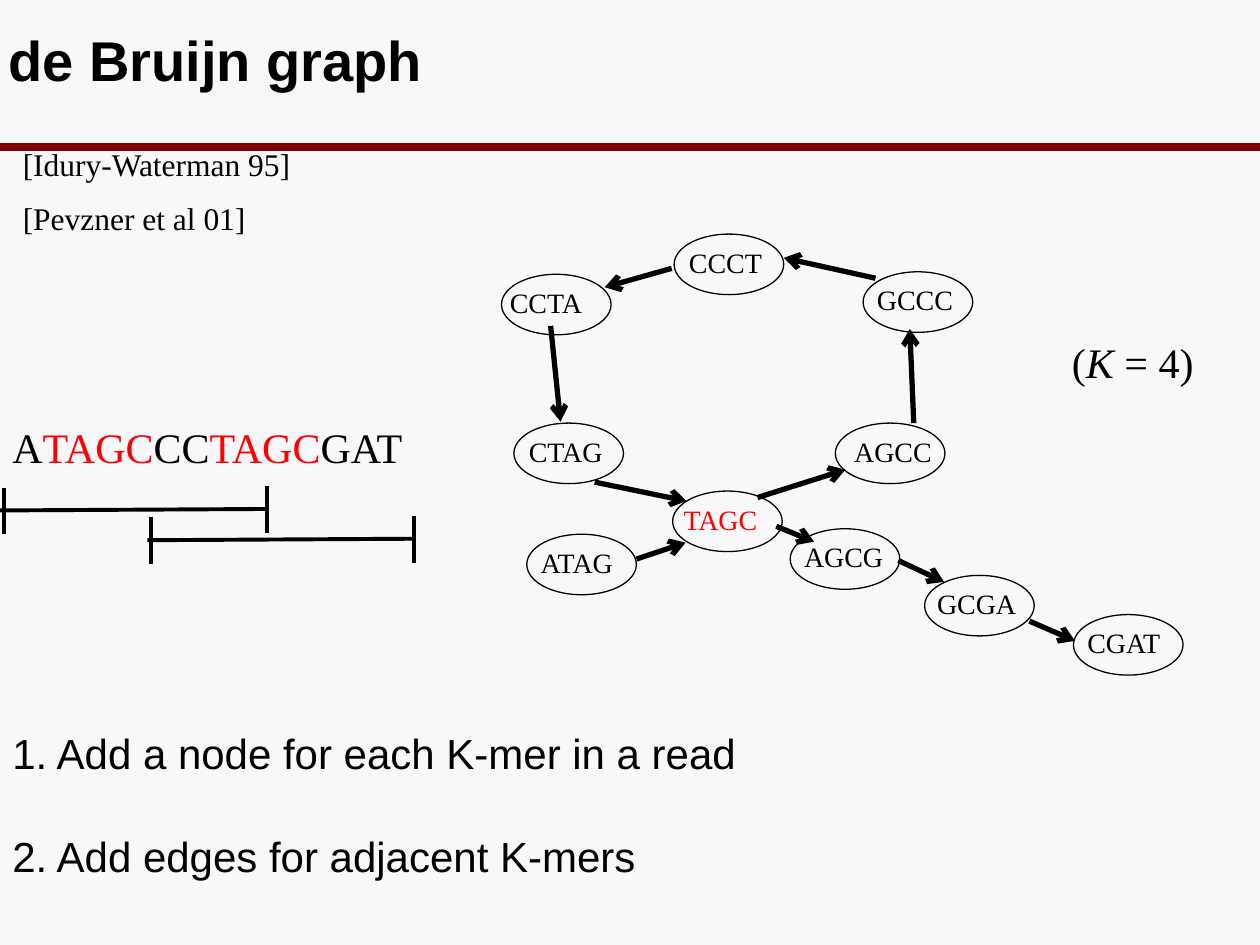
import pptx
import pptx.util
import pptx.dml.color
import pptx.enum.shapes
import pptx.enum.text
import pptx.oxml.ns
from lxml import etree

Cm, Pt = pptx.util.Cm, pptx.util.Pt
qn = pptx.oxml.ns.qn
COLORS = {"background": "F8F8FA", "rule": "800000", "ink": "000000", "repeat": "FF0000"}
SANS, SERIF = "Arial", "Times New Roman"
NODE_W, NODE_H = 2.21, 1.22

NODES = {
    "TAGC": (3.45, 5.18, -0.03),
    "AGCC": (6.73, 3.81, 0.13),
    "AGCG": (5.82, 5.94, 0.03),
    "GCCC": (7.29, 0.76, 0.03),
    "GCGA": (8.53, 6.88, 0),
    "CCCT": (3.48, 0, 0.05),
    "CCTA": (0, 0.81, -0.08),
    "CTAG": (0.25, 3.81, 0.05),
    "ATAG": (0.51, 6.05, 0.03),
    "CGAT": (11.53, 7.67, 0.03),
}
EDGES = [
    (0.99, 1.85, 1.19, 3.78),
    (3.43, 0.69, 2.08, 1.07),
    (7.54, 0.89, 5.69, 0.48),
    (8.31, 3.81, 8.23, 1.91),
    (5.54, 5.89, 6.3, 6.2),
    (8, 6.58, 8.92, 7.01),
    (5.16, 5.31, 6.93, 4.75),
    (2.72, 6.55, 3.71, 6.22),
    (10.64, 7.8, 11.56, 8.2),
    (1.88, 5, 3.73, 5.38),
]


def rgb(name):
    return pptx.dml.color.RGBColor.from_string(COLORS[name])


def add_text(shapes, box, runs, size, font, wrap=False, bold=False):
    tb = shapes.add_textbox(*(Cm(v) for v in box))
    tf = tb.text_frame
    tf.word_wrap = wrap
    p = tf.paragraphs[0]
    p.font.size, p.font.name, p.font.bold = Pt(size), font, bold
    for text, color, italic in runs:
        r = p.add_run()
        r.text = text
        r.font.color.rgb = rgb(color)
        if italic:
            r.font.italic = True
    return tf


def add_line(shapes, x1, y1, x2, y2, width, color="ink", arrow=False):
    line = shapes.add_connector(pptx.enum.shapes.MSO_CONNECTOR.STRAIGHT,
                                Cm(x1), Cm(y1), Cm(x2), Cm(y2))
    line.line.color.rgb = rgb(color)
    line.line.width = Pt(width)
    if arrow:
        etree.SubElement(line.line._get_or_add_ln(), qn("a:tailEnd"), type="arrow")
    etree.SubElement(line._element.spPr, qn("a:effectLst"))


def add_header(s, x, y, w, h):
    add_line(s.shapes, x, y + h, x + w, y + h, 4.5, "rule")
    tf = add_text(s.shapes, (x - 0.08, y + 0.13, 14.58, 2.11),
                  [("de Bruijn graph", "ink", False)], 32, SANS, wrap=True, bold=True)
    tf.vertical_anchor = pptx.enum.text.MSO_ANCHOR.MIDDLE


def add_citations(s, x, y, w, h):
    for i, text in enumerate(("[Idury-Waterman 95]", "[Pevzner et al 01]")):
        add_text(s.shapes, (x, y + i * 1.09, w, h), [(text, "ink", False)], 18, SERIF)


def add_bracket(s, x, y, w, h):
    g = s.shapes.add_group_shape().shapes
    add_line(g, x, y + 0.49, x + w, y + 0.46, 2.25)
    for tick, top in ((x + 0.08, y + 0.03), (x + w - 0.03, y)):
        add_line(g, tick, top, tick, top + h, 2.25)


def add_sequence(s, x, y, w, h):
    parts = [("A", "ink"), ("TAGC", "repeat"), ("CC", "ink"), ("TAGC", "repeat"), ("GAT", "ink")]
    add_text(s.shapes, (x, y, w, h), [(t, c, False) for t, c in parts], 24, SERIF)
    for dx, dy in ((0, 1.42), (2.97, 2.02)):
        add_bracket(s, x + dx, y + dy, 5.41, 0.94)


def add_graph(s, x, y):
    nodes = s.shapes.add_group_shape().shapes
    for kmer, (dx, dy, inset) in NODES.items():
        sp = nodes.add_shape(pptx.enum.shapes.MSO_SHAPE.OVAL,
                             Cm(x + dx), Cm(y + dy), Cm(NODE_W), Cm(NODE_H))
        sp.shadow.inherit = False
        sp.fill.background()
        sp.line.color.rgb = rgb("ink")
        sp.line.width = Pt(0.75)
        color = "repeat" if kmer == "TAGC" else "ink"
        add_text(nodes, (x + dx + inset, y + dy + 0.1, 3.73, 0.94),
                 [(kmer, color, False)], 16, SERIF, wrap=True)
    edges = s.shapes.add_group_shape().shapes
    for x1, y1, x2, y2 in EDGES:
        add_line(edges, x + x1, y + y1, x + x2, y + y2, 3, arrow=True)


def add_steps(s, x, y, w, h):
    steps = ("1. Add a node for each K-mer in a read", "2. Add edges for adjacent K-mers")
    for i, text in enumerate(steps):
        add_text(s.shapes, (x, y + i * 2.06, w, h), [(text, "ink", False)], 24, SANS)


def main():
    prs = pptx.Presentation()
    prs.slide_width, prs.slide_height = Cm(25.4), Cm(19.05)
    s = prs.slides.add_slide(prs.slide_layouts[6])
    s.background.fill.solid()
    s.background.fill.fore_color.rgb = rgb("background")
    add_header(s, 0, 0, 25.4, 2.97)
    add_citations(s, 0.21, 2.79, 6.2, 1.02)
    add_sequence(s, 0, 8.38, 8.43, 1.27)
    add_text(s.shapes, (21.36, 6.65, 3.38, 1.27),
             [("(", "ink", False), ("K", "ink", True), (" = 4)", "ink", False)], 24, SERIF)
    add_graph(s, 10.11, 4.72)
    add_steps(s, 0, 14.55, 15.24, 1.27)
    prs.save("out.pptx")


if __name__ == "__main__":
    main()
